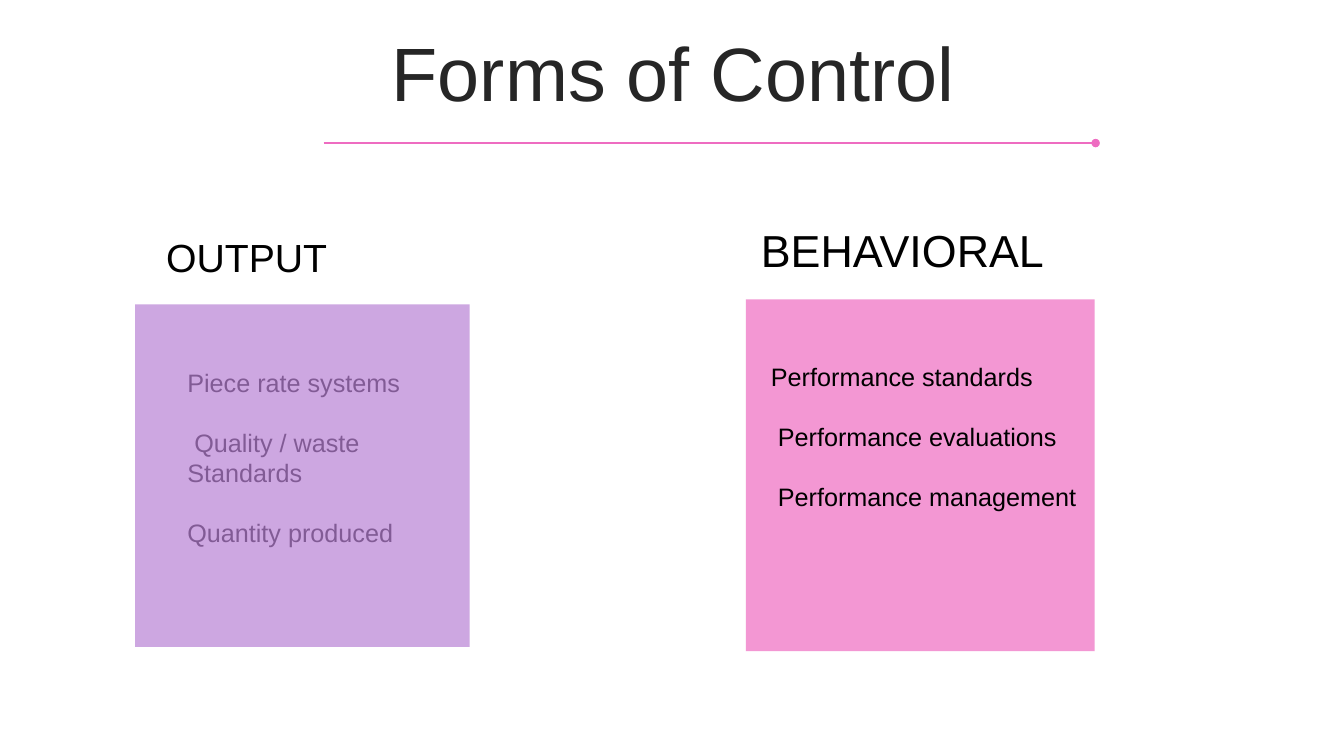
"""Builds the Forms of Control slide with its output and behavioral panels."""
import pptx
import pptx.dml.color
import pptx.enum.shapes
import pptx.enum.text
import pptx.oxml
import pptx.oxml.ns
import pptx.util
from lxml import etree

Pt = pptx.util.Pt
RGBColor = pptx.dml.color.RGBColor
PP_ALIGN = pptx.enum.text.PP_ALIGN
MSO_ANCHOR = pptx.enum.text.MSO_ANCHOR
qn = pptx.oxml.ns.qn

BLACK = RGBColor(0x00, 0x00, 0x00)
CHARCOAL = RGBColor(0x26, 0x26, 0x26)
PURPLE = RGBColor(0xB9, 0x82, 0xD5)
PINK = RGBColor(0xEE, 0x6C, 0xC1)
FONT = "Arial"
ITEM_SIZE, ITEM_GAP = 18, 21.5
OPACITY = 70

TITLE = ("Forms of Control", (25.2, 26.6, 911.5, 56.9), 54)
RULE = (231.1, 102.2, 782.6, 102.2)

OUTPUT = {
    "heading": ("OUTPUT", (111.6, 163.4, 223.9, 41), 28),
    "panel": ((96.5, 217.4, 239, 244.8), PURPLE),
    "items": [("Piece rate systems", 0), (" Quality / waste", ITEM_GAP),
              ("Standards", 0), ("Quantity produced", ITEM_GAP)],
    "items_box": (126.7, 258.5, 193, 138.2),
}
BEHAVIORAL = {
    "heading": ("BEHAVIORAL", (536.4, 155.5, 223.9, 46.1), 32),
    "panel": ((532.8, 213.8, 249.1, 251.3), PINK),
    "items": [("Performance standards", 0), (" Performance evaluations", ITEM_GAP),
              (" Performance management", ITEM_GAP)],
    "items_box": (543.6, 254.2, 260.6, 116.6),
}


def add_text(slide, box, lines, size, color=BLACK):
    tf = slide.shapes.add_textbox(*map(Pt, box)).text_frame
    tf.word_wrap = True
    tf.text = "\n".join(text for text, gap in lines)
    for p, (text, gap) in zip(tf.paragraphs, lines):
        p.space_before = Pt(gap)
        font = p.runs[0].font
        font.name, font.size, font.color.rgb = FONT, Pt(size), color
    return tf


def add_title(slide):
    text, box, size = TITLE
    tf = add_text(slide, box, [(text, 0)], size, CHARCOAL)
    tf.vertical_anchor = MSO_ANCHOR.MIDDLE
    p = tf.paragraphs[0]
    p.alignment = PP_ALIGN.CENTER
    p.line_spacing = 0.9


def add_rule(slide):
    line = slide.shapes.add_connector(
        pptx.enum.shapes.MSO_CONNECTOR.STRAIGHT, *map(Pt, RULE))
    line.line.color.rgb = PINK
    line.line.width = Pt(2)
    etree.SubElement(line.line._get_or_add_ln(), qn("a:tailEnd"), type="oval")
    etree.SubElement(line._element.spPr, qn("a:effectLst"))


def add_panel(slide, box, color):
    sp = slide.shapes.add_shape(
        pptx.enum.shapes.MSO_SHAPE.RECTANGLE, *map(Pt, box))
    sp.shadow.inherit = False
    sp.line.fill.background()
    sp.fill.solid()
    sp.fill.fore_color.rgb = color
    fill = sp._element.spPr.find(qn("a:solidFill"))
    etree.SubElement(fill[0], qn("a:alpha"), val=str(OPACITY * 1000))


def add_items(slide, form):
    add_text(slide, form["items_box"], form["items"], ITEM_SIZE)


def add_heading(slide, form):
    text, box, size = form["heading"]
    add_text(slide, box, [(text, 0)], size)


def main():
    prs = pptx.Presentation()
    prs.slide_width, prs.slide_height = Pt(960), Pt(540)
    s = prs.slides.add_slide(prs.slide_layouts[6])
    add_title(s)
    add_rule(s)
    add_items(s, OUTPUT)
    for form in (OUTPUT, BEHAVIORAL):
        add_panel(s, *form["panel"])
        add_heading(s, form)
    add_items(s, BEHAVIORAL)
    prs.save("out.pptx")


if __name__ == "__main__":
    main()
